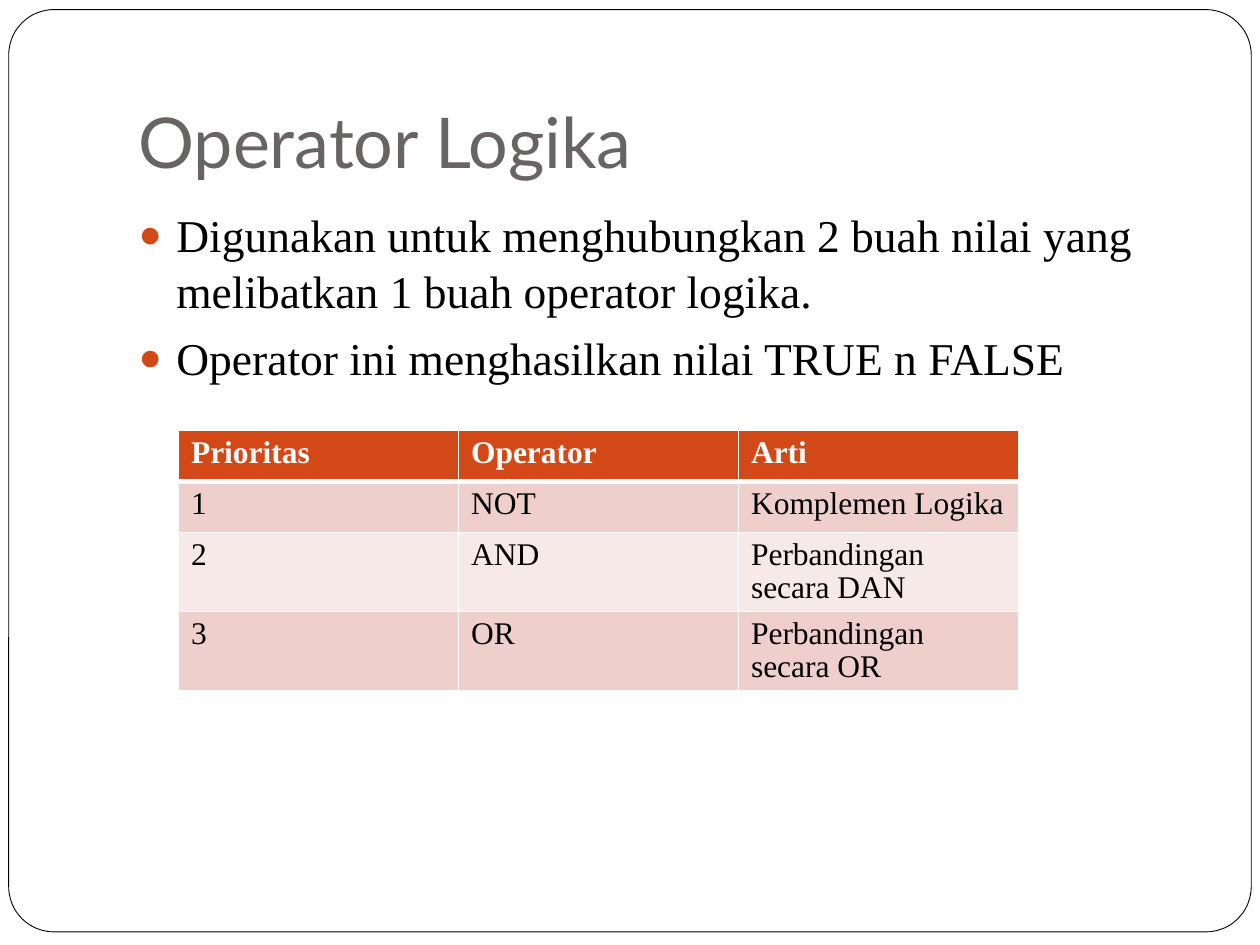
from dataclasses import dataclass

from lxml.etree import SubElement
from pptx import Presentation
from pptx.dml.color import RGBColor
from pptx.enum.shapes import MSO_SHAPE
from pptx.enum.text import MSO_ANCHOR, MSO_AUTO_SIZE, PP_ALIGN
from pptx.oxml.ns import qn
from pptx.util import Pt


@dataclass(frozen=True)
class Theme:
    title_font: str = "Lato"
    body_font: str = "Times New Roman"
    title_size: float = 40
    body_size: float = 26
    table_size: float = 18
    title: str = "696464"
    text: str = "000000"
    white: str = "FFFFFF"
    accent: str = "D34817"
    bands: tuple = ("EFCFCC", "F7E9E8")


THEME = Theme()

BULLETS = [
    "Digunakan untuk menghubungkan 2 buah nilai yang melibatkan 1 buah operator logika.",
    "Operator ini menghasilkan nilai TRUE n FALSE",
]
OPERATORS = [
    ("Prioritas", "Operator", "Arti"),
    ("1", "NOT", "Komplemen Logika"),
    ("2", "AND", "Perbandingan secara DAN"),
    ("3", "OR", "Perbandingan secara OR"),
]


def rgb(color):
    return RGBColor.from_string(color)


def add_run(p, text, font, size, color, bold=False):
    r = p.add_run()
    r.text = text
    r.font.name, r.font.size, r.font.bold = font, Pt(size), bold
    r.font.color.rgb = rgb(color)


def place(sp, left, top, width, height):
    sp.left, sp.top, sp.width, sp.height = map(Pt, (left, top, width, height))


def add_frame(s):
    sp = s.shapes.add_shape(MSO_SHAPE.ROUNDED_RECTANGLE,
                            Pt(5), Pt(5.5), Pt(710), Pt(527))
    sp.adjustments[0] = 0.049
    sp.shadow.inherit = False
    sp.fill.solid()
    sp.fill.fore_color.rgb = rgb(THEME.white)
    sp.line.color.rgb = rgb(THEME.text)
    sp.line.width = Pt(0.5)
    # Send behind the placeholders
    sp.element.getparent().insert(2, sp.element)


def set_title(s, text):
    sp = s.shapes.title
    place(sp, 72, 21.6, 612, 90)
    tf = sp.text_frame
    tf.auto_size = MSO_AUTO_SIZE.NONE
    tf.vertical_anchor = MSO_ANCHOR.BOTTOM
    tf.margin_bottom = Pt(7.2)
    p = tf.paragraphs[0]
    p.alignment = PP_ALIGN.LEFT
    add_run(p, text, THEME.title_font, THEME.title_size, THEME.title)


def add_bullet(p, indent):
    pPr = p._p.get_or_add_pPr()
    pPr.set("marL", str(Pt(indent)))
    pPr.set("indent", str(-Pt(indent)))
    color = SubElement(pPr, qn("a:buClr"))
    SubElement(color, qn("a:srgbClr"), val=THEME.accent)
    SubElement(pPr, qn("a:buSzPct"), val="85000")
    SubElement(pPr, qn("a:buChar"), char="●")


def set_body(s, items):
    sp = s.placeholders[1]
    place(sp, 72, 113.8, 612, 113.8)
    tf = sp.text_frame
    tf.auto_size = MSO_AUTO_SIZE.NONE
    for i, item in enumerate(items):
        p = tf.add_paragraph() if i else tf.paragraphs[0]
        p.line_spacing = 1.03
        p.space_before = Pt(5.8)
        add_bullet(p, 21.6)
        add_run(p, item, THEME.body_font, THEME.body_size, THEME.text)


def set_borders(cell, bottom):
    tcPr = cell._tc.get_or_add_tcPr()
    widths = {"lnL": 1, "lnR": 1, "lnT": 1, "lnB": bottom}
    for i, (side, width) in enumerate(widths.items()):
        ln = tcPr.makeelement(qn(f"a:{side}"), {"w": str(Pt(width))})
        fill = SubElement(ln, qn("a:solidFill"))
        SubElement(fill, qn("a:srgbClr"), val=THEME.white)
        tcPr.insert(i, ln)


def add_operator_table(s, rows):
    table = s.shapes.add_table(len(rows), len(rows[0]), Pt(102), Pt(246),
                               Pt(480), Pt(29.2 * len(rows))).table
    for i, row in enumerate(rows):
        header = i == 0
        fill = THEME.accent if header else THEME.bands[(i - 1) % 2]
        color = THEME.white if header else THEME.text
        for j, text in enumerate(row):
            cell = table.cell(i, j)
            cell.fill.solid()
            cell.fill.fore_color.rgb = rgb(fill)
            set_borders(cell, bottom=3 if header else 1)
            p = cell.text_frame.paragraphs[0]
            p.line_spacing = 0.95
            add_run(p, text, THEME.body_font, THEME.table_size, color, header)


def main():
    prs = Presentation()
    prs.slide_width, prs.slide_height = Pt(720), Pt(540)
    s = prs.slides.add_slide(prs.slide_layouts[1])
    add_frame(s)
    set_title(s, "Operator Logika")
    set_body(s, BULLETS)
    add_operator_table(s, OPERATORS)
    prs.save("out.pptx")


if __name__ == "__main__":
    main()
